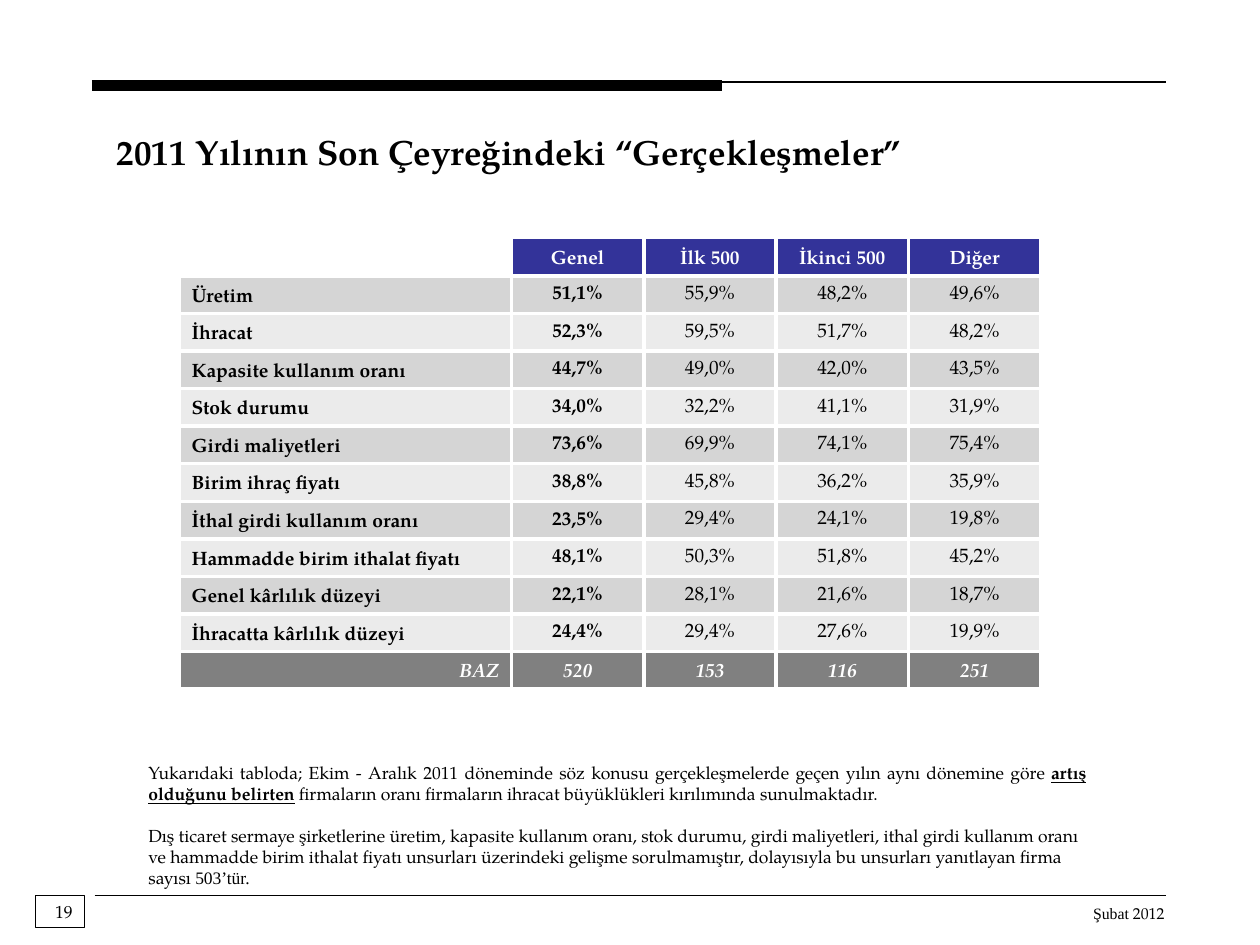
import pptx
import pptx.dml.color
import pptx.enum.shapes
import pptx.enum.text
import pptx.oxml
import pptx.oxml.ns
import pptx.util
from pptx.util import Inches

SERIF = "TeX Gyre Pagella"
TIMES = "Times New Roman"
ALIGN = pptx.enum.text.PP_ALIGN
ANCHOR = pptx.enum.text.MSO_ANCHOR


def color(value):
    return pptx.dml.color.RGBColor.from_string(value)


def write(para, text, size, ink="000000", **formats):
    span = para.add_run()
    span.text = text
    span.font.color.rgb = color(ink)
    for name, value in {"name": SERIF, "size": pptx.util.Pt(size), **formats}.items():
        setattr(span.font, name, value)


deck = pptx.Presentation()
deck.slide_width = Inches(10)
deck.slide_height = Inches(7.5)
page = deck.slides.add_slide(deck.slide_layouts[6])

for left, right, top, width in [
    (0.75, 9.25, 7.11, 0.75),
    (0.73, 5.73, 0.68, 6),
    (0.75, 9.25, 0.65, 0.75),
]:
    rule = page.shapes.add_connector(
        pptx.enum.shapes.MSO_CONNECTOR.STRAIGHT,
        Inches(left), Inches(top), Inches(right), Inches(top),
    )
    rule.line.color.rgb = color("000000")
    rule.line.width = pptx.util.Pt(width)
    rule._element.spPr.append(pptx.oxml.parse_xml(
        f'<a:effectLst {pptx.oxml.ns.nsdecls("a")}/>'
    ))

frame = page.shapes.add_shape(
    pptx.enum.shapes.MSO_SHAPE.RECTANGLE,
    Inches(0.28), Inches(7.11), Inches(0.39), Inches(0.25),
)
frame.shadow.inherit = False
frame.fill.background()
frame.line.color.rgb = color("000000")
frame.line.width = pptx.util.Pt(0.75)

bold = {"bold": True}
texts = [
    ((8.57, 7.12, 0.77, 0.25), False, ALIGN.RIGHT, 9, [
        [("Şubat ", {"name": TIMES}), ("2012", {})],
    ]),
    ((0.34, 7.1, 2.5, 0.4), True, ALIGN.LEFT, 10, [[("19", {})]]),
    ((1.08, 6, 7.64, 1.1), True, ALIGN.JUSTIFY, 10, [
        [
            ("Yukarıdaki tabloda; Ekim - Aralık 2011 döneminde söz konusu gerçekleşmelerde "
             "geçen yılın aynı dönemine göre ", {}),
            ("artış olduğunu belirten", {"bold": True, "underline": True}),
            (" firmaların oranı firmaların ihracat büyüklükleri kırılımında sunulmaktadır.", {}),
        ],
        [("Dış ticaret sermaye şirketlerine üretim, kapasite kullanım oranı, stok durumu, "
          "girdi maliyetleri, ithal girdi kullanım oranı", {})],
        [("ve hammadde birim ithalat fiyatı unsurları üzerindeki gelişme sorulmamıştır, "
          "dolayısıyla bu unsurları yanıtlayan firma", {})],
        [("sayısı ", {}), ("503’tür.", {"name": TIMES})],
    ]),
    ((0.83, 0.99, 7.4, 0.44), True, ALIGN.LEFT, 20, [
        [("2011 Yılının Son Çeyreğindeki “Gerçekleşmeler”", bold)],
    ]),
]
for place, wrap, align, size, paras in texts:
    box = page.shapes.add_textbox(*map(Inches, place))
    box.text_frame.word_wrap = wrap
    for index, spans in enumerate(paras):
        para = box.text_frame.paragraphs[0] if index == 0 else box.text_frame.add_paragraph()
        para.alignment = align
        if index == 1:
            para.space_before = pptx.util.Pt(12)
        for text, formats in spans:
            write(para, text, size, **formats)

rows = [
    ("", "Genel", "İlk 500", "İkinci 500", "Diğer"),
    ("Üretim", "51,1%", "55,9%", "48,2%", "49,6%"),
    ("İhracat", "52,3%", "59,5%", "51,7%", "48,2%"),
    ("Kapasite kullanım oranı", "44,7%", "49,0%", "42,0%", "43,5%"),
    ("Stok durumu", "34,0%", "32,2%", "41,1%", "31,9%"),
    ("Girdi maliyetleri", "73,6%", "69,9%", "74,1%", "75,4%"),
    ("Birim ihraç fiyatı", "38,8%", "45,8%", "36,2%", "35,9%"),
    ("İthal girdi kullanım oranı", "23,5%", "29,4%", "24,1%", "19,8%"),
    ("Hammadde birim ithalat fiyatı", "48,1%", "50,3%", "51,8%", "45,2%"),
    ("Genel kârlılık düzeyi", "22,1%", "28,1%", "21,6%", "18,7%"),
    ("İhracatta kârlılık düzeyi", "24,4%", "29,4%", "27,6%", "19,9%"),
    ("BAZ", "520", "153", "116", "251"),
]
last = len(rows) - 1
table = page.shapes.add_table(
    len(rows), 5, Inches(1.42), Inches(1.88), Inches(6.85), Inches(3.58)
).table
table.first_row = False
table.horz_banding = False
for index, column in enumerate(table.columns):
    column.width = Inches(2.64 if index == 0 else 1.05)

for r, row in enumerate(rows):
    for c, text in enumerate(row):
        cell = table.cell(r, c)
        header, base, label = r == 0, r == last, c == 0
        tight = not text or not (header or base or label)
        side, edge = (0.01, 0.01) if tight else (0.1, 0.05)
        for name, value in {
            "margin_left": Inches(side),
            "margin_right": Inches(side),
            "margin_top": Inches(edge),
            "margin_bottom": Inches(0 if tight else edge),
            "vertical_anchor": ANCHOR.MIDDLE if tight else ANCHOR.BOTTOM,
        }.items():
            setattr(cell, name, value)
        for border in ("lnL", "lnR", "lnT", "lnB"):
            cell._tc.get_or_add_tcPr().append(pptx.oxml.parse_xml(
                f'<a:{border} {pptx.oxml.ns.nsdecls("a")} w="28575">'
                f'<a:solidFill><a:srgbClr val="FFFFFF"/></a:solidFill></a:{border}>'
            ))
        if header:
            fill = "FFFFFF" if label else "333399"
        elif base:
            fill = "808080"
        else:
            fill = "D5D5D5" if r % 2 else "EBEBEB"
        cell.fill.solid()
        cell.fill.fore_color.rgb = color(fill)
        para = cell.text_frame.paragraphs[0]
        if label:
            para.alignment = ALIGN.RIGHT if base else ALIGN.LEFT
        else:
            para.alignment = ALIGN.CENTER
        write(para, text, 11, "FFFFFF" if header or base else "000000",
              bold=header or base or c < 2, italic=base)

deck.save("out.pptx")
